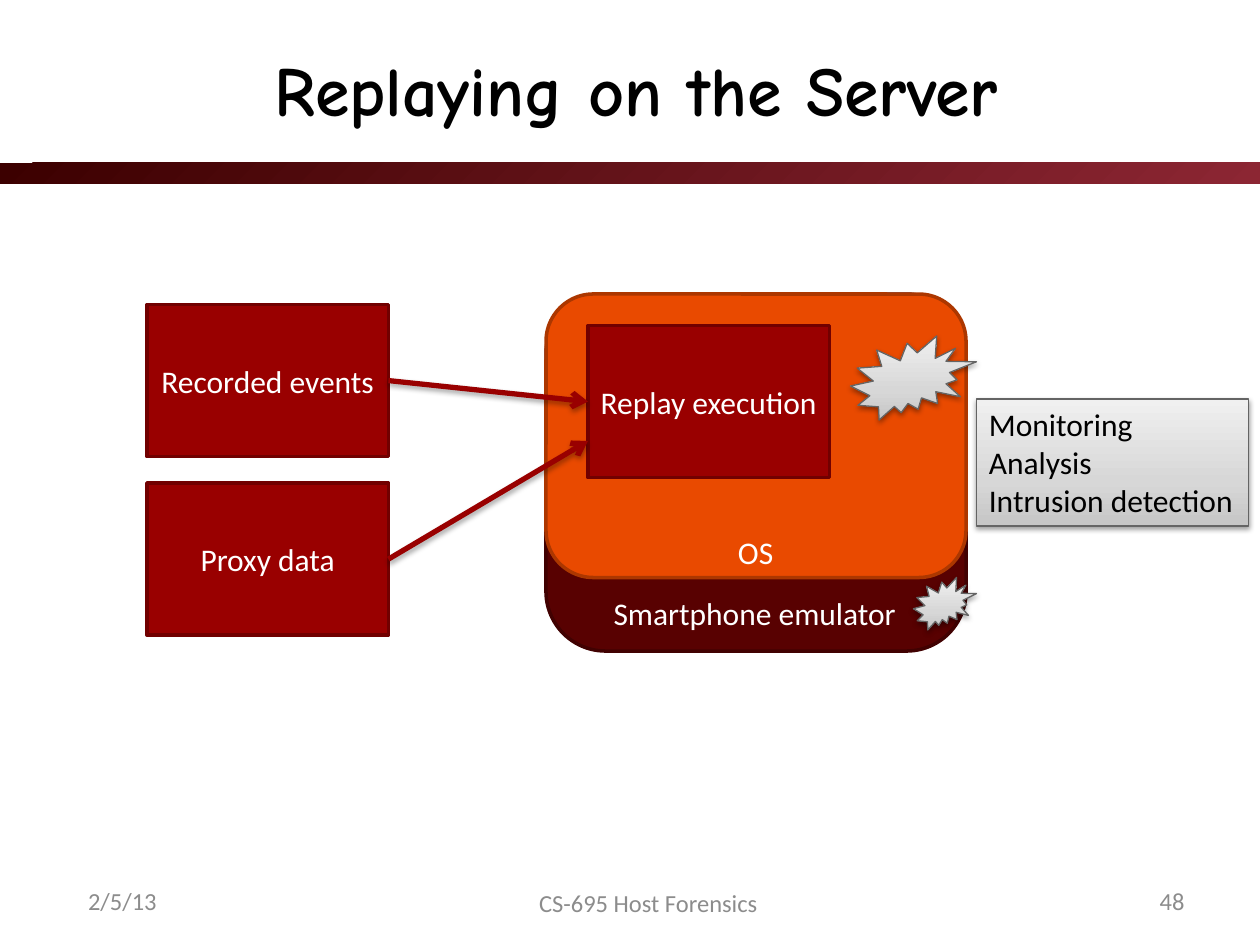
"""Build the slide on replaying recorded events on a server."""
from typing import NamedTuple, Optional

from pptx import Presentation
from pptx import util as u
from pptx.dml.color import RGBColor
from pptx.enum import shapes, text
from pptx.oxml import parse_xml
from pptx.oxml.ns import nsdecls, qn

CELL = 1 / 12
COLUMNS, ROWS = 120, 90
FONT = "Calibri"
COLORS = {
    "white": "FFFFFF", "black": "000000", "footer": "8C8C8C",
    "red": "990000", "red_edge": "710000",
    "orange": "E94A00", "orange_edge": "AC3700",
    "maroon": "580101", "maroon_edge": "410101", "gray_edge": "646464",
}
BAND_STOPS = [(0, "3C0000"), (100, "8C2633")]
SILVER_STOPS = [(0, "C6C6C6"), (35, "D7D7D7"), (100, "F0F0F0")]
RECT = shapes.MSO_SHAPE.RECTANGLE
ROUNDED = shapes.MSO_SHAPE.ROUNDED_RECTANGLE
BURST = shapes.MSO_SHAPE.EXPLOSION2
LEFT, CENTER, RIGHT = text.PP_ALIGN.LEFT, text.PP_ALIGN.CENTER, text.PP_ALIGN.RIGHT
TOP, MIDDLE = text.MSO_ANCHOR.TOP, text.MSO_ANCHOR.MIDDLE


class Area(NamedTuple):
    column: float
    row: float
    columns: float
    rows: float


class Style(NamedTuple):
    size: float = 18
    color: str = "white"
    align: text.PP_ALIGN = LEFT
    anchor: text.MSO_ANCHOR = TOP
    wrap: bool = False
    font: str = FONT
    bold: bool = False


class Block(NamedTuple):
    kind: shapes.MSO_SHAPE
    area: Area
    fill: str
    label: str = ""


class Label(NamedTuple):
    words: str
    area: Area
    style: Style = Style()


BLOCK_STYLE = Style(align=CENTER, anchor=MIDDLE, wrap=True)
FOOTER = Style(14, "footer", anchor=MIDDLE, wrap=True)
EMULATOR = Block(ROUNDED, Area(52, 28, 40, 34), "maroon")
SYSTEM = Block(ROUNDED, Area(52, 28, 40, 27), "orange")
RECORDED = Block(RECT, Area(14, 29, 23, 14.5), "red", "Recorded events")
PROXY = Block(RECT, Area(14, 46, 23, 14.5), "red", "Proxy data")
REPLAY = Block(RECT, Area(56, 31, 23, 14.5), "red", "Replay execution")
BURSTS = [Area(81, 32, 12, 8), Area(87, 55, 6, 5)]
MONITOR = Area(93, 38, 25.9, 12.1)
MONITOR_LINES = ["Monitoring", "Analysis", "Intrusion detection"]
LABELS = [
    Label("Smartphone emulator", Area(57.25, 56, 29.6, 4.8)),
    Label("OS", Area(69.1, 50.2, 5.9, 4.8)),
    Label("2/5/13", Area(7.2, 83.4, 22, 4.8), FOOTER),
    Label("CS-695 Host Forensics", Area(46.8, 83.6, 29.9, 4.8),
          FOOTER._replace(align=CENTER)),
    Label("48", Area(92, 83.4, 22, 4.8), FOOTER._replace(align=RIGHT)),
]


def cells(count: float) -> u.Length:
    """Turn a number of grid cells into a length."""
    return u.Inches(count * CELL)


def rgb(name: str) -> RGBColor:
    """Look up a named colour."""
    return RGBColor.from_string(COLORS[name])


def write(shape, lines: list, style: Style) -> None:
    """Fill a shape with one styled paragraph per line."""
    frame = shape.text_frame
    frame.word_wrap = style.wrap
    frame.vertical_anchor = style.anchor
    for index, words in enumerate(lines):
        para = frame.add_paragraph() if index else frame.paragraphs[0]
        para.alignment = style.align
        span = para.add_run()
        span.text = words
        span.font.name = style.font
        span.font.size = u.Pt(style.size)
        span.font.bold = style.bold
        span.font.color.rgb = rgb(style.color)


def add_shape(page, kind: shapes.MSO_SHAPE, area: Area, edge: Optional[str] = None,
              width: float = 0.75):
    """Add a preset shape without shadow, with an optional outline."""
    shape = page.shapes.add_shape(kind, *map(cells, area))
    shape.shadow.inherit = False
    if edge:
        shape.line.color.rgb = rgb(edge)
        shape.line.width = u.Pt(width)
    else:
        shape.line.fill.background()
    return shape


def add_block(page, block: Block):
    """Add a solid shape with its darker outline and centred label."""
    shape = add_shape(page, block.kind, block.area, block.fill + "_edge", 2)
    shape.fill.solid()
    shape.fill.fore_color.rgb = rgb(block.fill)
    if block.label:
        write(shape, [block.label], BLOCK_STYLE)
    return shape


def set_gradient(shape, stops: list, angle: int) -> None:
    """Give a shape a linear gradient with a clockwise angle."""
    marks = "".join(f'<a:gs pos="{position * 1000}"><a:srgbClr val="{color}"/></a:gs>'
                    for position, color in stops)
    gradient = parse_xml(f'<a:gradFill {nsdecls("a")} rotWithShape="1"><a:gsLst>{marks}'
                         f'</a:gsLst><a:lin ang="{angle * 60000}" scaled="0"/></a:gradFill>')
    shape.element.spPr.find(qn("a:prstGeom")).addnext(gradient)


def set_shadow(shape, distance: float, opacity: int) -> None:
    """Give a shape or connector a soft shadow straight below."""
    properties = shape.element.spPr
    for effects in properties.findall(qn("a:effectLst")):
        properties.remove(effects)
    properties.append(parse_xml(
        f'<a:effectLst {nsdecls("a")}><a:outerShdw blurRad="{u.Pt(3.1)}" '
        f'dist="{u.Pt(distance)}" dir="5400000" rotWithShape="0"><a:srgbClr val="000000">'
        f'<a:alpha val="{opacity * 1000}"/></a:srgbClr></a:outerShdw></a:effectLst>'))


def add_silver(page, kind: shapes.MSO_SHAPE, area: Area):
    """Add a shadowed silver shape."""
    shape = add_shape(page, kind, area, "gray_edge")
    set_gradient(shape, SILVER_STOPS, 270)
    set_shadow(shape, 1.6, 38)
    return shape


def add_label(page, label: Label) -> None:
    """Add a text box."""
    box = page.shapes.add_textbox(*map(cells, label.area))
    write(box, [label.words], label.style)


def add_arrow(page, source, target, end_row: Optional[float] = None) -> None:
    """Join a block's right side to a target's left side, or to a row on it."""
    end_y = cells(end_row) if end_row else target.top
    arrow = page.shapes.add_connector(shapes.MSO_CONNECTOR.STRAIGHT, source.left,
                                      source.top, target.left, end_y)
    arrow.begin_connect(source, 3)
    if end_row is None:
        arrow.end_connect(target, 1)
    arrow.line.color.rgb = rgb("red")
    arrow.line.width = u.Pt(3)
    line = arrow.element.spPr.find(qn("a:ln"))
    line.append(parse_xml(f'<a:tailEnd {nsdecls("a")} type="arrow"/>'))
    set_shadow(arrow, 1.8, 35)


def main() -> None:
    """Build and save the deck."""
    deck = Presentation()
    deck.slide_width, deck.slide_height = cells(COLUMNS), cells(ROWS)
    page = deck.slides.add_slide(deck.slide_layouts.get_by_name("Title Only"))
    title = page.shapes.title
    title.left, title.top, title.width, title.height = map(cells, Area(7.2, 1.8, 106.8, 13.2))
    write(title, ["Replaying on the Server"],
          Style(40, "black", CENTER, MIDDLE, True, "Comic Neue", True))
    band = add_shape(page, RECT, Area(0, 15.5, COLUMNS, 2))
    set_gradient(band, BAND_STOPS, 45)

    add_block(page, EMULATOR)
    add_block(page, SYSTEM)
    recorded, proxy, replay = (add_block(page, block) for block in (RECORDED, PROXY, REPLAY))
    for label in LABELS:
        add_label(page, label)
    add_arrow(page, recorded, replay)
    add_arrow(page, proxy, replay, end_row=42)
    for area in BURSTS:
        add_silver(page, BURST, area)
    write(add_silver(page, RECT, MONITOR), MONITOR_LINES, Style(color="black"))
    deck.save("out.pptx")


if __name__ == "__main__":
    main()
